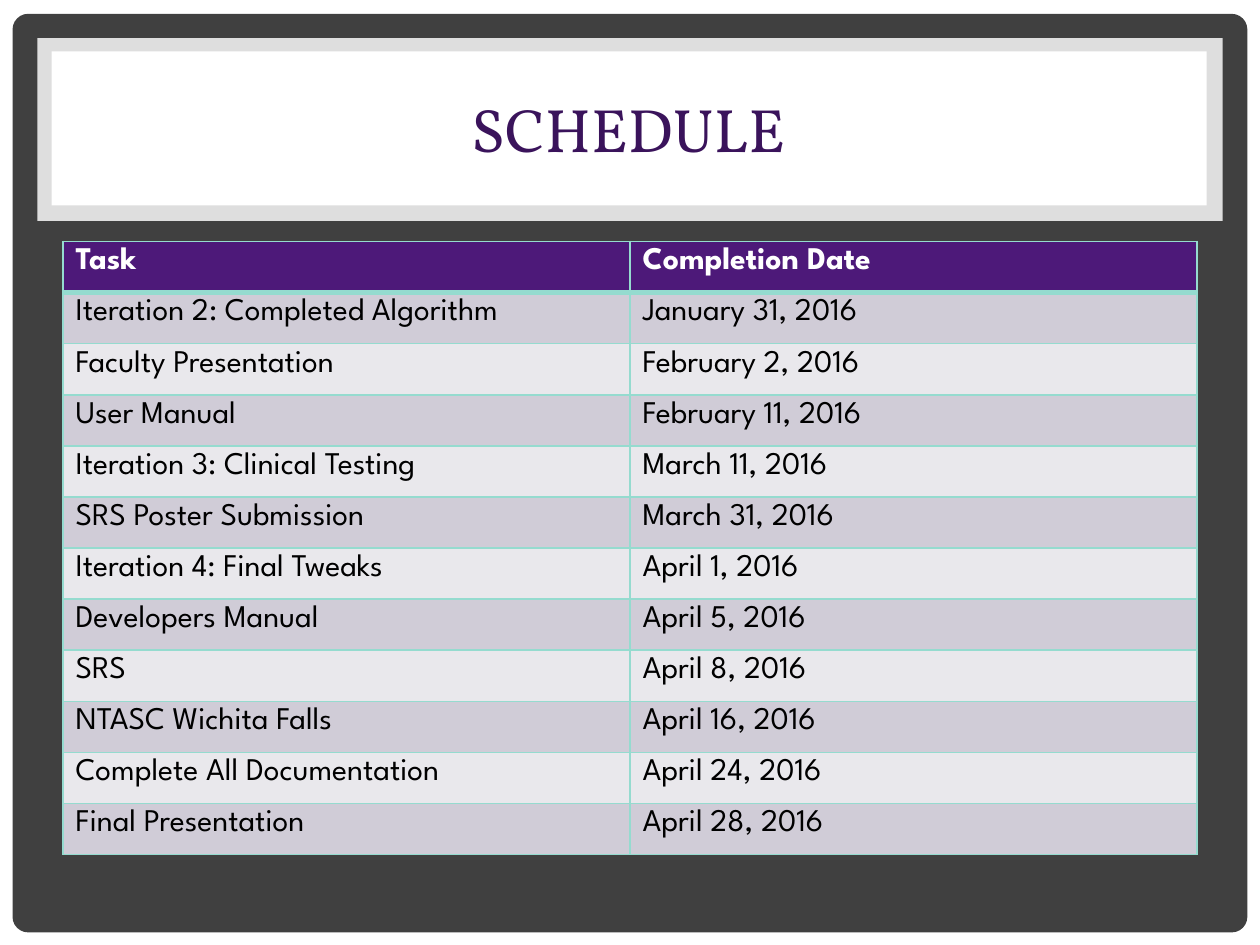
import pptx
import pptx.dml.color
import pptx.enum.shapes
import pptx.enum.text
import pptx.util
from lxml import etree
from pptx.oxml.ns import qn

Pt = pptx.util.Pt
SHAPE = pptx.enum.shapes.MSO_SHAPE
COLORS = {
    "white": "FFFFFF", "black": "000000", "mint": "95DBCF", "charcoal": "404040",
    "title": "3A135B", "header": "4D1979", "odd": "D0CCD7", "even": "E9E8EC",
}
SCHEDULE = [
    ("Task", "Completion Date"),
    ("Iteration 2: Completed Algorithm", "January 31, 2016"),
    ("Faculty Presentation", "February 2, 2016"),
    ("User Manual", "February 11, 2016"),
    ("Iteration 3: Clinical Testing", "March 11, 2016"),
    ("SRS Poster Submission", "March 31, 2016"),
    ("Iteration 4: Final Tweaks", "April 1, 2016"),
    ("Developers Manual", "April 5, 2016"),
    ("SRS", "April 8, 2016"),
    ("NTASC Wichita Falls", "April 16, 2016"),
    ("Complete All Documentation", "April 24, 2016"),
    ("Final Presentation", "April 28, 2016"),
]


def rgb(name):
    return pptx.dml.color.RGBColor.from_string(COLORS[name])


def add_borders(cell, widths):
    """Draw mint cell borders; widths maps each side (L, R, T, B) to points."""
    properties = cell._tc.get_or_add_tcPr()
    for position, (side, width) in enumerate(widths.items()):
        line = etree.Element(qn(f"a:ln{side}"), w=str(Pt(width)))
        fill = etree.SubElement(line, qn("a:solidFill"))
        etree.SubElement(fill, qn("a:srgbClr"), val=COLORS["mint"])
        properties.insert(position, line)


presentation = pptx.Presentation()
presentation.slide_width, presentation.slide_height = Pt(720), Pt(540)
slide = presentation.slides.add_slide(presentation.slide_layouts[5])
slide.background.fill.solid()
slide.background.fill.fore_color.rgb = rgb("mint")

# Page, dark panel, translucent title frame and title card
for kind, left, top, width, height, color, opacity in [
    (SHAPE.RECTANGLE, 0, 0, 720, 540, "white", 100),
    (SHAPE.ROUNDED_RECTANGLE, 7.2, 7.92, 705.6, 524.9, "charcoal", 100),
    (SHAPE.RECTANGLE, 21.3, 21.8, 677.4, 104.4, "white", 83),
    (SHAPE.RECTANGLE, 29.5, 29.4, 660, 88, "white", 100),
]:
    panel = slide.shapes.add_shape(kind, Pt(left), Pt(top), Pt(width), Pt(height))
    panel.shadow.inherit = False
    panel.fill.solid()
    panel.fill.fore_color.rgb = rgb(color)
    panel.line.fill.background()
    if kind == SHAPE.ROUNDED_RECTANGLE:
        panel.adjustments[0] = 0.017
    if opacity < 100:
        fill_color = panel.element.spPr.find(qn("a:solidFill"))[0]
        etree.SubElement(fill_color, qn("a:alpha"), val=str(opacity * 1000))

title = slide.shapes.title
title.left, title.top, title.width, title.height = Pt(34), Pt(32.4), Pt(650), Pt(82)
title.text_frame.text = "SCHEDULE"
title.text_frame.vertical_anchor = pptx.enum.text.MSO_ANCHOR.MIDDLE
heading = title.text_frame.paragraphs[0]
heading.alignment = pptx.enum.text.PP_ALIGN.CENTER
heading.font.name, heading.font.size = "Vollkorn", Pt(35)
heading.font.color.rgb = rgb("title")
slide.shapes._spTree.append(title.element)  # bring the title above the panels

row_height = 29.2
schedule = slide.shapes.add_table(
    len(SCHEDULE), 2, Pt(36), Pt(138), Pt(648), Pt(row_height * len(SCHEDULE))
).table
for row_index, entries in enumerate(SCHEDULE):
    is_header = row_index == 0
    schedule.rows[row_index].height = Pt(row_height)
    for column_index, entry in enumerate(entries):
        cell = schedule.cell(row_index, column_index)
        cell.text = entry
        cell.fill.solid()
        cell.fill.fore_color.rgb = rgb(
            "header" if is_header else "odd" if row_index % 2 else "even")
        font = cell.text_frame.paragraphs[0].font
        font.name, font.size, font.bold = "League Spartan", Pt(18), is_header
        font.color.rgb = rgb("white" if is_header else "black")
        add_borders(cell, {"L": 1, "R": 1, "T": 3 if row_index == 1 else 1,
                           "B": 3 if is_header else 1})

presentation.save("out.pptx")
